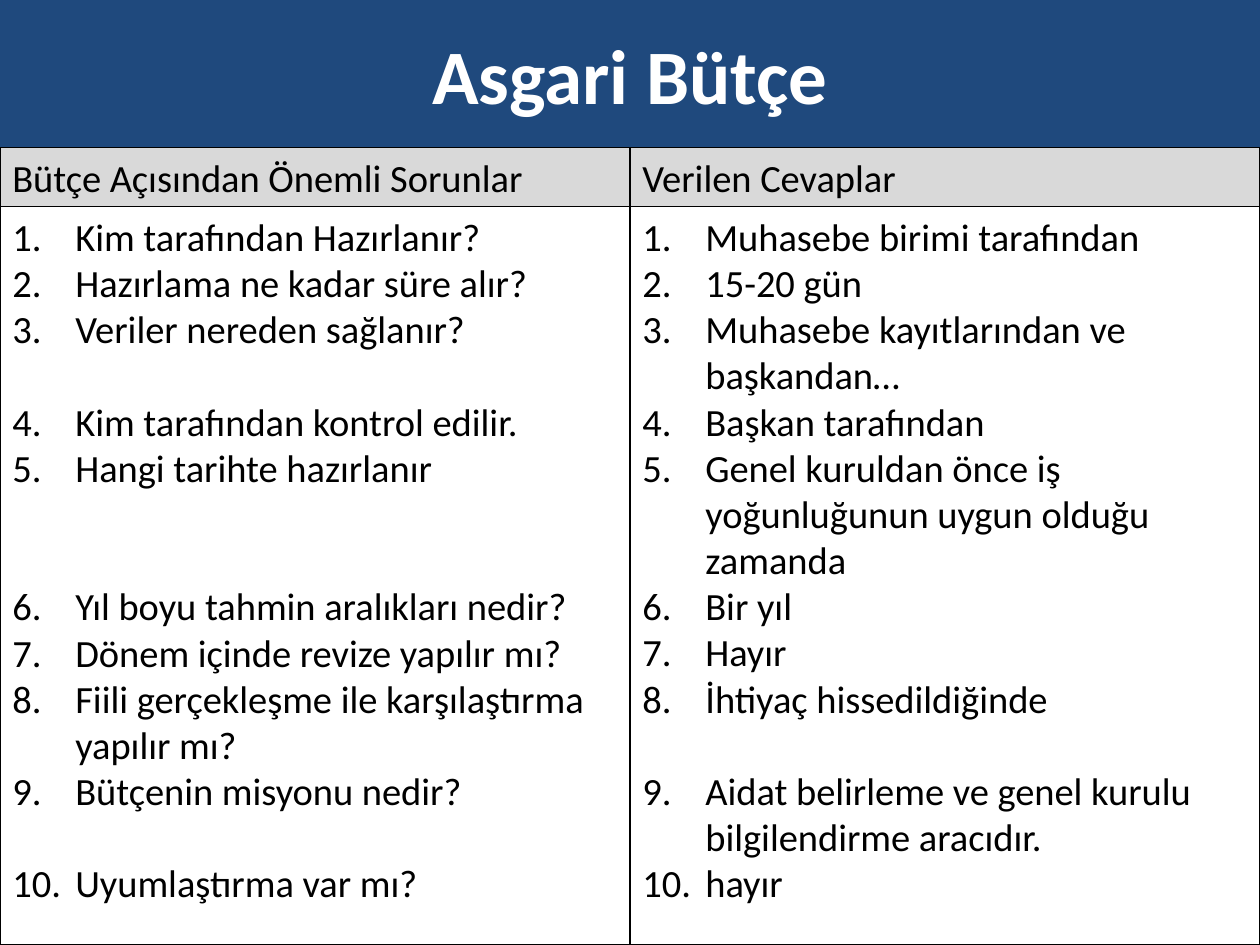
from pptx import Presentation, util as u
from pptx.dml.color import RGBColor
from pptx.enum import shapes, text
from pptx.oxml.ns import qn
from lxml import etree

LINE = 26.4
HEADS = ["Bütçe Açısından Önemli Sorunlar", "Verilen Cevaplar"]
LISTS = [
    [
        ("Kim tarafından Hazırlanır?", 0),
        ("Hazırlama ne kadar süre alır?", 0),
        ("Veriler nereden sağlanır?", 1),
        ("Kim tarafından kontrol edilir.", 0),
        ("Hangi tarihte hazırlanır", 2),
        ("Yıl boyu tahmin aralıkları nedir?", 0),
        ("Dönem içinde revize yapılır mı?", 0),
        ("Fiili gerçekleşme ile karşılaştırma yapılır mı?", 0),
        ("Bütçenin misyonu nedir?", 1),
        ("Uyumlaştırma var mı?", 0),
    ],
    [
        ("Muhasebe birimi tarafından", 0),
        ("15-20 gün", 0),
        ("Muhasebe kayıtlarından ve başkandan…", 0),
        ("Başkan tarafından", 0),
        ("Genel kuruldan önce iş yoğunluğunun uygun olduğu zamanda", 0),
        ("Bir yıl", 0),
        ("Hayır", 0),
        ("İhtiyaç hissedildiğinde", 1),
        ("Aidat belirleme ve genel kurulu bilgilendirme aracıdır.", 0),
        ("hayır", 0),
    ],
]


def tint(code):
    return RGBColor.from_string(code)


class Deck:
    """Holds the style and the current slide."""

    font, size, ink = "Calibri", 22, "000000"

    def __init__(self, slide):
        self.slide = slide

    def box(self, area, fill=None, line=None):
        shape = self.slide.shapes.add_shape(
            shapes.MSO_SHAPE.RECTANGLE, *(u.Inches(n) for n in area))
        shape.shadow.inherit = False
        if fill:
            shape.fill.solid()
            shape.fill.fore_color.rgb = tint(fill)
        else:
            shape.fill.background()
        if line:
            shape.line.color.rgb = tint(line)
            shape.line.width = u.Pt(0.75)
        else:
            shape.line.fill.background()
        shape.text_frame.word_wrap = True
        return shape.text_frame

    def label(self, frame, words, size=None, ink=None, bold=False,
              align=text.PP_ALIGN.LEFT, anchor=text.MSO_ANCHOR.TOP):
        frame.text = words
        frame.vertical_anchor = anchor
        for para in frame.paragraphs:
            para.alignment = align
            for run in para.runs:
                run.font.name = self.font
                run.font.size = u.Pt(size or self.size)
                run.font.color.rgb = tint(ink or self.ink)
                run.font.bold = bold

    def title(self, words, area):
        self.label(self.box(area, "1F497D"), words, 44, "FFFFFF", True,
                   text.PP_ALIGN.CENTER, text.MSO_ANCHOR.MIDDLE)

    def head(self, words, area):
        self.label(self.box(area, "D9D9D9", self.ink), words)

    def list(self, items, area):
        frame = self.box(area, line=self.ink)
        self.label(frame, "\n".join(words for words, gap in items))
        for para, (words, gap) in zip(frame.paragraphs, items):
            para.space_after = u.Pt(gap * LINE)
            props = para._p.get_or_add_pPr()
            props.set("marL", str(u.Inches(0.5)))
            props.set("indent", str(-u.Inches(0.5)))
            etree.SubElement(props, qn("a:buFont"), typeface="+mj-lt")
            etree.SubElement(props, qn("a:buAutoNum"), type="arabicPeriod")


def main():
    prs = Presentation()
    prs.slide_width, prs.slide_height = u.Inches(10), u.Inches(7.5)
    deck = Deck(prs.slides.add_slide(prs.slide_layouts[6]))
    deck.title("Asgari Bütçe", (0, 0, 10, 1.17))
    for col, (head, items) in enumerate(zip(HEADS, LISTS)):
        deck.list(items, (5 * col, 1.64, 5, 5.86))
        deck.head(head, (5 * col, 1.17, 5, 0.47))
    prs.save("out.pptx")


if __name__ == "__main__":
    main()
